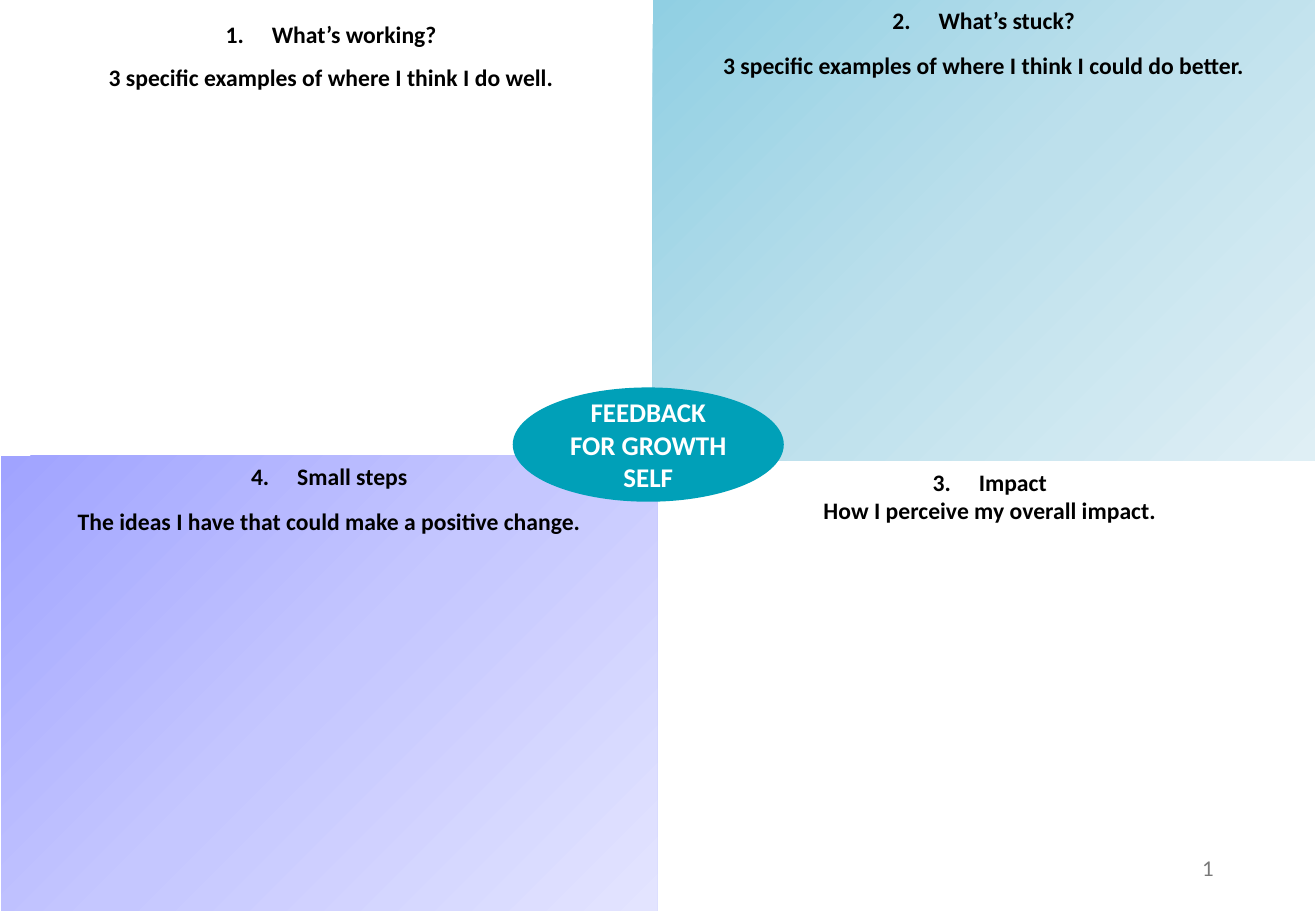
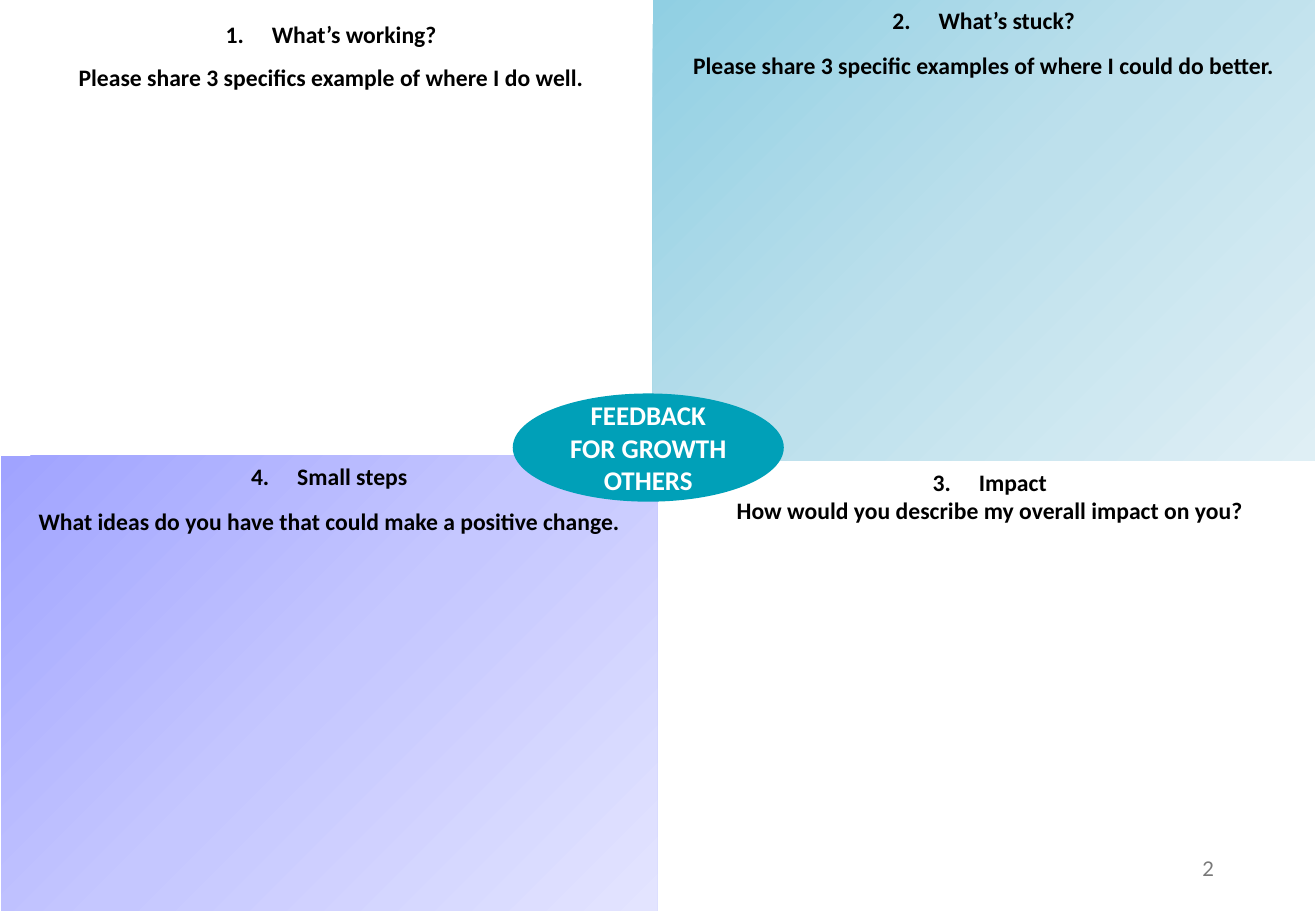
from pptx import Presentation
from pptx.dml.color import RGBColor
from pptx.enum.shapes import MSO_SHAPE
from pptx.enum.text import MSO_ANCHOR, PP_ALIGN
from pptx.oxml import parse_xml
from pptx.oxml.ns import nsdecls
from pptx.util import Inches, Pt

COLORS = {"text": "000000", "white": "FFFFFF", "hub": "00A0B8", "number": "797979"}
GRADIENTS = {
    "blue": ("90CFE3", "BDE0EC", "DFEFF5"),
    "violet": ("A0A3FF", "C5C7FF", "E3E4FF"),
}

# heading, box (left, top, width, height), gradient, line spacing, gap before the prompt
QUADRANTS = [
    ("What’s working?", (0, 0, 5.45, 3.62), None, 1.5, 0),
    ("What’s stuck?", (5.37, 0, 5.45, 3.79), "blue", 1, 10),
    ("Impact", (5.42, 3.8, 5.45, 3.7), None, 1, 0),
    ("Small steps", (0.01, 3.75, 5.4, 3.75), "violet", 1, 10),
]
NUMBER_BOX = (7.65, 6.95, 2.44, 0.4)
HUB_LEFT, HUB_WIDTH, HUB_BOTTOM = 4.23, 2.21, 4.12

# audience, hub height, prompts in quadrant order
SLIDES = [
    ("SELF", 0.92, [
        "3 specific examples of where I think I do well.",
        "3 specific examples of where I think I could do better.",
        "How I perceive my overall impact.",
        "The ideas I have that could make a positive change.",
    ]),
    ("OTHERS", 0.87, [
        "Please share 3 specifics example of where I do well.",
        "Please share 3 specific examples of where I could do better.",
        "How would you describe my overall impact on you?",
        "What ideas do you have that could make a positive change.",
    ]),
]


def inches(box):
    return [Inches(value) for value in box]


def write_lines(frame, lines, size, color):
    """Fill a frame with centred bold lines and return its paragraphs."""
    frame.word_wrap = True
    frame.text = "\n".join(lines)
    for paragraph in frame.paragraphs:
        paragraph.alignment = PP_ALIGN.CENTER
        for run in paragraph.runs:
            run.font.name = "Calibri"
            run.font.size = Pt(size)
            run.font.bold = True
            run.font.color.rgb = RGBColor.from_string(COLORS[color])
    return frame.paragraphs


def fill_gradient(shape, stops):
    """Diagonal gradient with evenly spaced stops."""
    step = 100000 // (len(stops) - 1)
    marks = "".join(
        f'<a:gs pos="{i * step}"><a:srgbClr val="{color}"/></a:gs>'
        for i, color in enumerate(stops))
    gradient = parse_xml(
        f'<a:gradFill {nsdecls("a")} rotWithShape="1"><a:gsLst>{marks}</a:gsLst>'
        '<a:lin ang="2700000" scaled="0"/></a:gradFill>')
    shape._element.spPr.prstGeom.addnext(gradient)


def number_heading(paragraph, number):
    """Automatic number with a hanging indent."""
    properties = paragraph._p.get_or_add_pPr()
    properties.set("marL", str(Inches(0.38)))
    properties.set("indent", str(-Inches(0.38)))
    properties.append(parse_xml(
        f'<a:buAutoNum {nsdecls("a")} type="arabicPeriod" startAt="{number}"/>'))


def add_quadrant(slide, number, quadrant, prompt):
    heading, box, gradient, spacing, gap = quadrant
    if gradient:
        panel = slide.shapes.add_shape(MSO_SHAPE.RECTANGLE, *inches(box))
        panel.shadow.inherit = False
        fill_gradient(panel, GRADIENTS[gradient])
        panel.line.fill.background()
    else:
        panel = slide.shapes.add_textbox(*inches(box))
    panel.text_frame.vertical_anchor = MSO_ANCHOR.TOP
    title, question = write_lines(panel.text_frame, [heading, prompt], 14, "text")
    title.line_spacing = question.line_spacing = float(spacing)
    question.space_before = Pt(gap)
    number_heading(title, number)


def add_slide_number(slide, number):
    frame = slide.shapes.add_textbox(*inches(NUMBER_BOX)).text_frame
    frame.word_wrap = True
    frame.vertical_anchor = MSO_ANCHOR.MIDDLE
    paragraph = frame.paragraphs[0]
    paragraph.alignment = PP_ALIGN.RIGHT
    paragraph._p.append(parse_xml(
        f'<a:fld {nsdecls("a")} id="{{B6F15528-21DE-4FAA-801E-634DDDAF4B2B}}" type="slidenum">'
        f'<a:rPr lang="en-GB" sz="1200"><a:solidFill><a:srgbClr val="{COLORS["number"]}"/>'
        f'</a:solidFill><a:latin typeface="Lato"/></a:rPr><a:t>{number}</a:t></a:fld>'))


def add_hub(slide, audience, height):
    box = (HUB_LEFT, HUB_BOTTOM - height, HUB_WIDTH, height)
    hub = slide.shapes.add_shape(MSO_SHAPE.OVAL, *inches(box))
    hub.shadow.inherit = False
    hub.fill.solid()
    hub.fill.fore_color.rgb = RGBColor.from_string(COLORS["hub"])
    hub.line.color.rgb = RGBColor.from_string(COLORS["hub"])
    hub.line.width = Pt(1.5)
    hub.text_frame.vertical_anchor = MSO_ANCHOR.MIDDLE
    write_lines(hub.text_frame, ["FEEDBACK FOR GROWTH", audience], 16, "white")


def add_feedback_slide(deck, page, audience, hub_height, prompts):
    slide = deck.slides.add_slide(deck.slide_layouts[6])
    for number, (quadrant, prompt) in enumerate(zip(QUADRANTS, prompts), 1):
        add_quadrant(slide, number, quadrant, prompt)
    add_slide_number(slide, page)
    add_hub(slide, audience, hub_height)


def main():
    deck = Presentation()
    deck.slide_width, deck.slide_height = Inches(10.83), Inches(7.5)
    for page, content in enumerate(SLIDES, 1):
        add_feedback_slide(deck, page, *content)
    deck.save("out.pptx")


if __name__ == "__main__":
    main()
